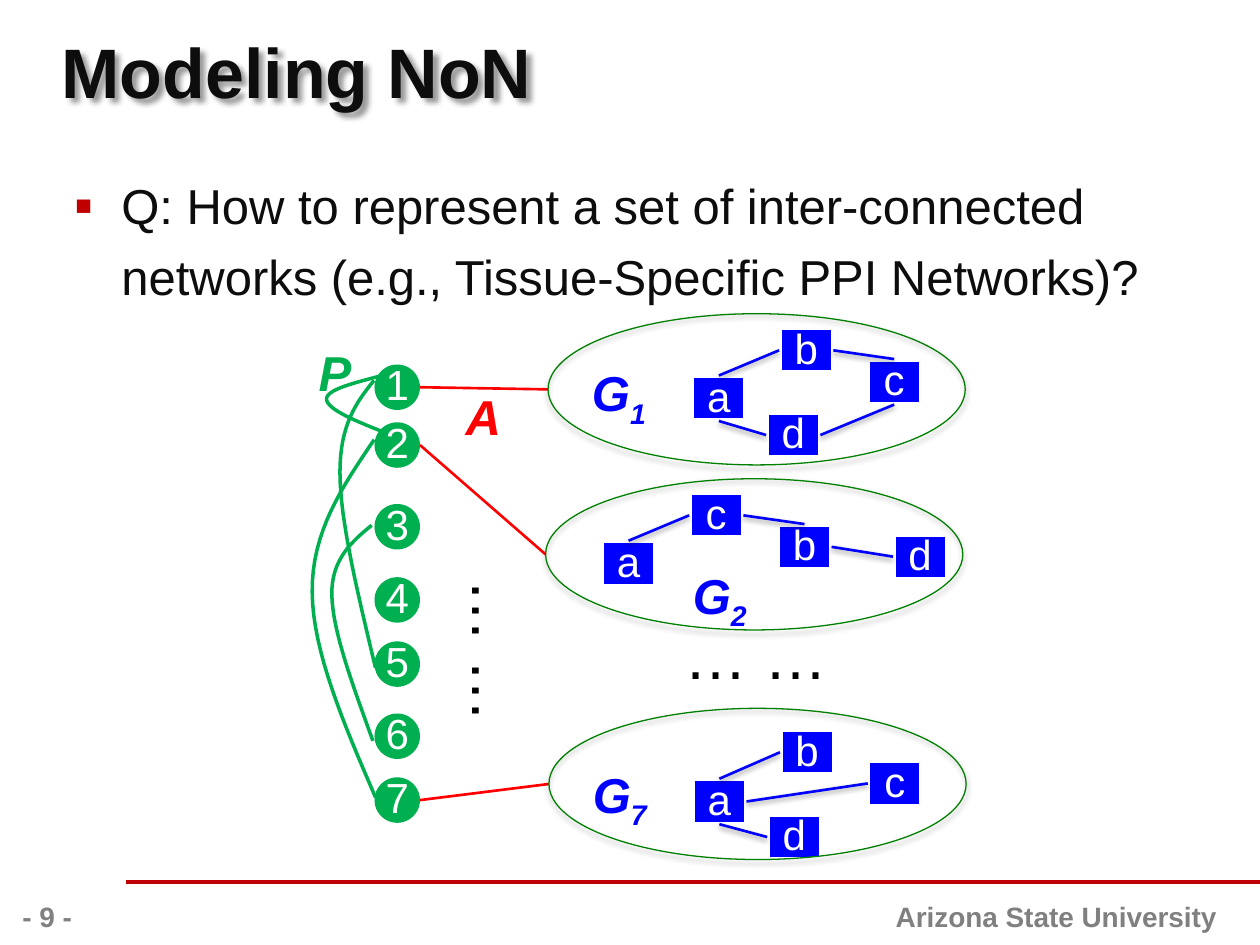
from lxml import etree
from pptx import Presentation
from pptx import util as u
from pptx.dml import color
from pptx.enum import shapes, text
from pptx.oxml import ns

Pt = u.Pt
GREEN, BLUE, RED, GRAY, INK = "00B050", "0000FF", "FF0000", "808080", "0D0D0D"
NODE = 26
BOX_WIDTH, BOX_HEIGHT = 31, 26
OVAL_WIDTH, OVAL_HEIGHT = 238.4, 86.4
TOP, LEFT, BOTTOM, RIGHT = range(4)


def rgb(value):
    return color.RGBColor.from_string(value)


def add_xml(parent, tag, **attributes):
    return etree.SubElement(parent, ns.qn(tag), attributes)


def write(shape, content, size=24, fill="FFFFFF", bold=False, italic=False,
          subscript="", align=text.PP_ALIGN.LEFT, anchor=text.MSO_ANCHOR.TOP,
          insets=(7.2, 3.6, 7.2, 3.6), wrap=True, spacing=None, bullet=None):
    frame = shape.text_frame
    frame.word_wrap = wrap
    frame.vertical_anchor = anchor
    (frame.margin_left, frame.margin_top,
     frame.margin_right, frame.margin_bottom) = map(Pt, insets)
    paragraph = frame.paragraphs[0]
    paragraph.alignment = align
    if spacing:
        paragraph.line_spacing = spacing
    if bullet:
        properties = paragraph._p.get_or_add_pPr()
        properties.set("marL", str(Pt(27)))
        properties.set("indent", str(-Pt(27)))
        add_xml(add_xml(properties, "a:buClr"), "a:srgbClr", val="C00000")
        add_xml(properties, "a:buSzPct", val="110000")
        add_xml(properties, "a:buFont", typeface="Arial")
        add_xml(properties, "a:buChar", char=bullet)
    for part in filter(None, (content, subscript)):
        run = paragraph.add_run()
        run.text = part
        font = run.font
        font.name, font.size, font.bold, font.italic = "Arial", Pt(size), bold, italic
        font.color.rgb = rgb(fill)
        if part == subscript:
            font._element.set("baseline", "-25000")


class Sketch:
    def __init__(self, slide):
        self.slide = slide
        self.shapes = slide.shapes

    def effects(self, shape, shadow=None):
        """Clear the theme shadow; shadow is (opacity, blur, distance, angle)."""
        effects = add_xml(shape._element.spPr, "a:effectLst")
        if shadow:
            opacity, blur, distance, angle = shadow
            outer = add_xml(effects, "a:outerShdw", blurRad=str(Pt(blur)),
                            dist=str(Pt(distance)), dir=str(angle * 60000),
                            rotWithShape="0")
            shade = add_xml(outer, "a:srgbClr", val="000000")
            add_xml(shade, "a:alpha", val=str(opacity * 1000))

    def label(self, left, top, width, height, content, rotation=0, shadow=None, **style):
        box = self.shapes.add_textbox(Pt(left), Pt(top), Pt(width), Pt(height))
        box.rotation = rotation
        write(box, content, **style)
        if shadow:
            self.effects(box, shadow)

    def shape(self, kind, left, top, width, height, content="", fill=None,
              line=None, weight=1, shadow=None):
        shape = self.shapes.add_shape(kind, Pt(left), Pt(top), Pt(width), Pt(height))
        if fill:
            shape.fill.solid()
            shape.fill.fore_color.rgb = rgb(fill)
        else:
            shape.fill.background()
        if line:
            shape.line.color.rgb = rgb(line)
            shape.line.width = Pt(weight)
        else:
            shape.line.fill.background()
        self.effects(shape, shadow)
        if content:
            write(shape, content, align=text.PP_ALIGN.CENTER,
                  anchor=text.MSO_ANCHOR.MIDDLE, insets=(0, 0, 0, 3.6))
        return shape

    def line(self, start, end, fill, weight, shadow=None):
        connector = self.shapes.add_connector(
            shapes.MSO_CONNECTOR.STRAIGHT, *map(Pt, start + end))
        connector.line.color.rgb = rgb(fill)
        connector.line.width = Pt(weight)
        self.effects(connector, shadow)
        return connector

    def edge(self, start, start_side, end, end_side):
        connector = self.line((0, 0), (0, 0), BLUE, 1.5, (38, 3.1, 1.6, 90))
        connector.begin_connect(start, start_side)
        connector.end_connect(end, end_side)

    def curve(self, points, steps=16):
        """Draw joined cubic Bézier segments: a start, then three points each."""
        track = []
        for first in range(0, len(points) - 1, 3):
            for step in range(1, steps + 1):
                t = step / steps
                weights = ((1 - t) ** 3, 3 * t * (1 - t) ** 2, 3 * t * t * (1 - t), t ** 3)
                track.append([Pt(sum(w * p[axis] for w, p in
                                     zip(weights, points[first:first + 4])))
                              for axis in (0, 1)])
        builder = self.shapes.build_freeform(*map(Pt, points[0]))
        builder.add_line_segments(track, close=False)
        shape = builder.convert_to_shape()
        shape.fill.background()
        shape.line.color.rgb = rgb(GREEN)
        shape.line.width = Pt(2)
        shape.shadow.inherit = False

    def network(self, number, oval, label, boxes, edges):
        self.label(*label, 52.6, 41.2, "G", subscript=number, size=28, fill=BLUE,
                   bold=True, italic=True, wrap=False)
        members = {name: self.shape(shapes.MSO_SHAPE.RECTANGLE, *place, BOX_WIDTH,
                                    BOX_HEIGHT, name, BLUE, "FFFFFF", 3)
                   for name, place in boxes.items()}
        for start, start_side, end, end_side in edges:
            self.edge(members[start], start_side, members[end], end_side)
        self.shape(shapes.MSO_SHAPE.OVAL, *oval, OVAL_WIDTH, OVAL_HEIGHT,
                   line="008000", weight=0.75, shadow=(35, 3.1, 1.8, 90))


def main():
    presentation = Presentation()
    presentation.slide_width, presentation.slide_height = Pt(720), Pt(540)
    sketch = Sketch(presentation.slides.add_slide(presentation.slide_layouts[6]))

    # Footer, title and question
    footer = dict(size=16, fill=GRAY, bold=True)
    sketch.line((72, 504), (720, 504), "C00000", 2)
    sketch.label(354, 510.5, 348.5, 29.5, "Arizona State University",
                 align=text.PP_ALIGN.RIGHT, **footer)
    sketch.label(0, 510.5, 54, 29.5, "- 9 -", align=text.PP_ALIGN.CENTER, **footer)
    sketch.label(35.3, 8.6, 648, 63.4, "Modeling NoN", size=40, fill=INK, bold=True,
                 anchor=text.MSO_ANCHOR.MIDDLE, insets=(0, 0, 0, 0),
                 shadow=(40, 3, 3, 45))
    sketch.label(35.3, 90, 684.7, 402.5,
                 "Q: How to represent a set of inter-connected networks "
                 "(e.g., Tissue-Specific PPI Networks)?",
                 size=28, fill=INK, spacing=1.2, bullet="▪")

    # Links from the main network to its member networks
    node_left = 214
    node_tops = (208.3, 241.3, 288, 329.8, 366.5, 407.7, 444.2)
    ovals = {"1": (313.2, 179.3), "2": (311.8, 273.6), "7": (313.7, 404.8)}
    for number, (left, top) in ovals.items():
        sketch.line((node_left + NODE, node_tops[int(number) - 1] + NODE / 2),
                    (left, top + OVAL_HEIGHT / 2), RED, 1.5)

    # Main network
    for number, top in enumerate(node_tops, 1):
        sketch.shape(shapes.MSO_SHAPE.OVAL, node_left, top, NODE, NODE, str(number), GREEN)
    for points in (
        [(213.8, 217.4), (203.8, 229.7), (194.3, 242.6), (194.3, 270),
         (194.3, 297.4), (204.5, 339.1), (214.6, 381.6)],
        [(212.4, 300.2), (200.9, 309.6), (189.4, 319.7), (189.6, 339.8),
         (190, 360.7), (201.6, 391.7), (213.1, 423.4)],
        [(213.8, 251.3), (195.8, 277.9), (178, 303.8), (178.4, 338.4),
         (178.6, 372.2), (196.6, 414), (214.6, 455.8)],
        [(218.2, 214.6), (202.3, 218.9), (186.5, 222.5), (186.6, 228.2),
         (187.2, 234), (203, 240.5), (219.6, 247)],
    ):
        sketch.curve(points)
    matrix = dict(size=28, bold=True, italic=True, wrap=False)
    sketch.label(175, 192.2, 33.1, 41.2, "P", fill=GREEN, **matrix)
    sketch.label(259, 217.4, 35.3, 41.2, "A", fill=RED, **matrix)

    # Member networks
    sketch.network("1", ovals["1"], (331.2, 203.8),
                   {"a": (395.3, 214.6), "b": (445.2, 187.2),
                    "d": (437.8, 235.6), "c": (495.5, 205.2)},
                   [("a", TOP, "b", LEFT), ("b", RIGHT, "c", TOP),
                    ("a", BOTTOM, "d", LEFT), ("d", RIGHT, "c", BOTTOM)])
    sketch.network("2", ovals["2"], (388.8, 319.7),
                   {"a": (343.7, 309), "c": (393.8, 281.5),
                    "d": (510.3, 305.1), "b": (444.2, 299.5)},
                   [("a", TOP, "c", LEFT), ("c", RIGHT, "b", TOP),
                    ("d", LEFT, "b", RIGHT)])
    sketch.network("7", ovals["7"], (331.7, 433.4),
                   {"a": (395.6, 445), "b": (445.7, 416.9),
                    "d": (438.4, 465.3), "c": (495.9, 434.7)},
                   [("a", TOP, "b", LEFT), ("c", LEFT, "a", RIGHT),
                    ("a", BOTTOM, "d", LEFT)])

    # Omitted nodes and networks
    for left, top, rotation in ((383.8, 348.5, 0), (235.4, 347, 90)):
        sketch.label(left, top, 97.2, 51, "… …", rotation, size=36, fill="000000",
                     wrap=False)

    presentation.save("out.pptx")


if __name__ == "__main__":
    main()
